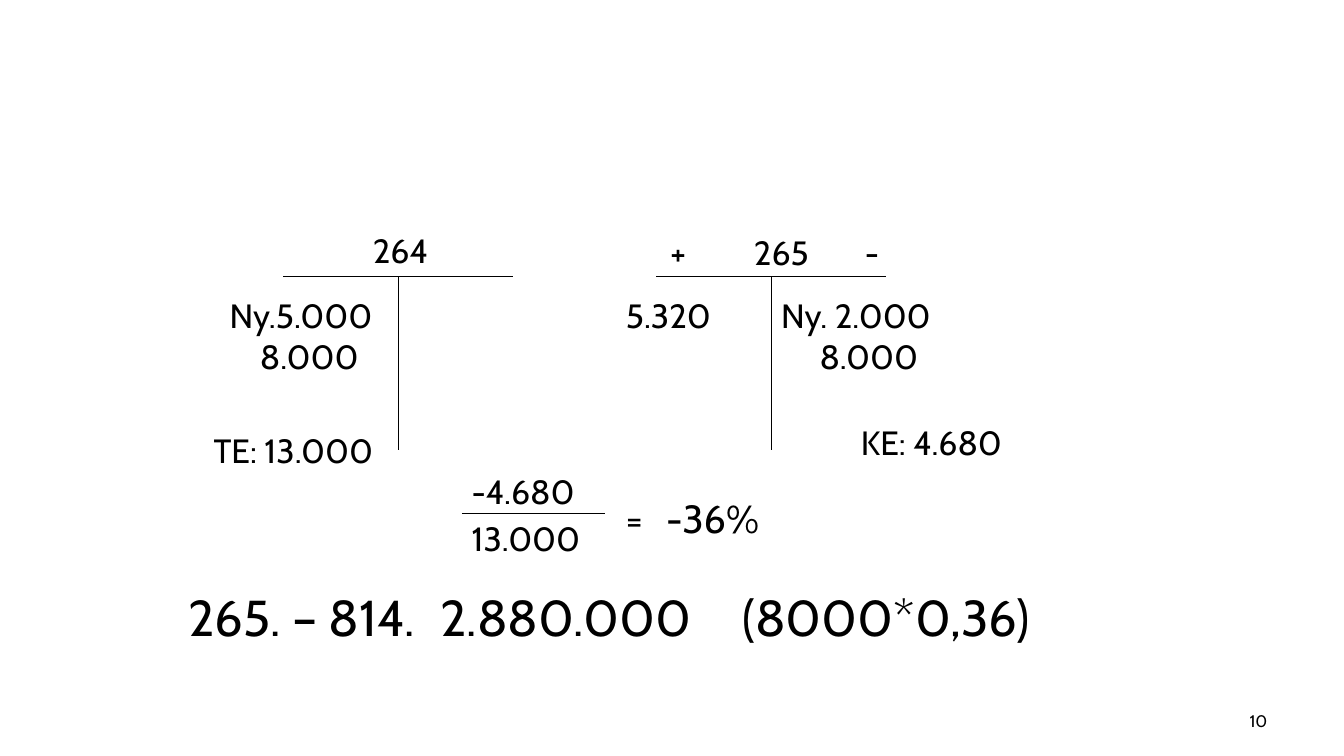
from pptx import Presentation
from pptx.dml.color import RGBColor
from pptx.enum.shapes import MSO_CONNECTOR
from pptx.enum.text import MSO_ANCHOR, MSO_AUTO_SIZE, PP_ALIGN
from pptx.oxml.ns import qn
from pptx.util import Inches, Pt
from lxml import etree

STRAIGHT = MSO_CONNECTOR.STRAIGHT
MIDDLE = MSO_ANCHOR.MIDDLE
GROW = MSO_AUTO_SIZE.SHAPE_TO_FIT_TEXT
RIGHT = PP_ALIGN.RIGHT
COLORS = {"ink": "000000", "paper": "FFFFFF"}
FONT = "Cabin"
INK = RGBColor.from_string(COLORS["ink"])

presentation = Presentation()
presentation.slide_width = Inches(13.33)
presentation.slide_height = Inches(7.5)
slide = presentation.slides.add_slide(presentation.slide_layouts[6])
slide.background.fill.solid()
slide.background.fill.fore_color.rgb = RGBColor.from_string(COLORS["paper"])


def add_line(x1, y1, x2, y2):
    line = slide.shapes.add_connector(
        STRAIGHT, Inches(x1), Inches(y1), Inches(x2), Inches(y2))
    line.line.color.rgb = INK
    line.line.width = Pt(0.75)
    etree.SubElement(line._element.spPr, qn("a:effectLst"))


def add_text(text, left, top, width, height=0.51, size=24, indent=0):
    """Add a text box; the indent applies to every paragraph after the first."""
    box = slide.shapes.add_textbox(
        Inches(left), Inches(top), Inches(width), Inches(height))
    frame = box.text_frame
    frame.word_wrap = True
    frame.auto_size = GROW
    frame.text = text
    for number, paragraph in enumerate(frame.paragraphs):
        if number and indent:
            paragraph._p.get_or_add_pPr().set("marL", str(Inches(indent)))
        for run in paragraph.runs:
            run.font.name = FONT
            run.font.size = Pt(size)
            run.font.color.rgb = INK
    return frame


# T-accounts
BAR_TOP, STEM_BOTTOM, HALF_BAR = 2.74, 4.46, 1.14
ENTRY_TOP = 2.88
for center in (3.95, 7.65):
    add_line(center - HALF_BAR, BAR_TOP, center + HALF_BAR, BAR_TOP)
    add_line(center, BAR_TOP, center, STEM_BOTTOM)

add_text("264", 3.6, 2.23, 1.42)
add_text("Ny.5.000\n8.000", 2.18, ENTRY_TOP, 1.65, 0.91, indent=0.3)
add_text("TE: 13.000", 2.02, 4.22, 2.2)

for heading, left, width in (("+", 6.55, 0.32), ("265", 7.38, 1.06), ("-", 8.48, 0.32)):
    add_text(heading, left, 2.25, width)
add_text("5.320", 6.11, ENTRY_TOP, 1.26)
add_text("Ny. 2.000\n8.000", 7.65, ENTRY_TOP, 2.24, 0.91, indent=0.38)
add_text("KE: 4.680", 8.44, 4.14, 2.09)

# Ratio
RATIO_LEFT, RATIO_BAR = 4.58, 5.09
add_text("-4.680", RATIO_LEFT, 4.62, 1.38)
add_line(RATIO_LEFT, RATIO_BAR, 6, RATIO_BAR)
add_text("13.000", RATIO_LEFT, RATIO_BAR, 1.54)
add_text("=", 6.11, 4.9, 0.44)
add_text("-36%", 6.51, 4.85, 2.66, 0.57, size=28)

# Posting and page number
add_text("265. – 814.\t2.880.000 \t(8000*0,36)", 1.77, 5.77, 9, 0.71, size=36)
page_number = add_text("10", 9.56, 6.95, 3.11, 0.4, size=12)
page_number.auto_size = MSO_AUTO_SIZE.NONE
page_number.vertical_anchor = MIDDLE
page_number.paragraphs[0].alignment = RIGHT

presentation.save("out.pptx")
